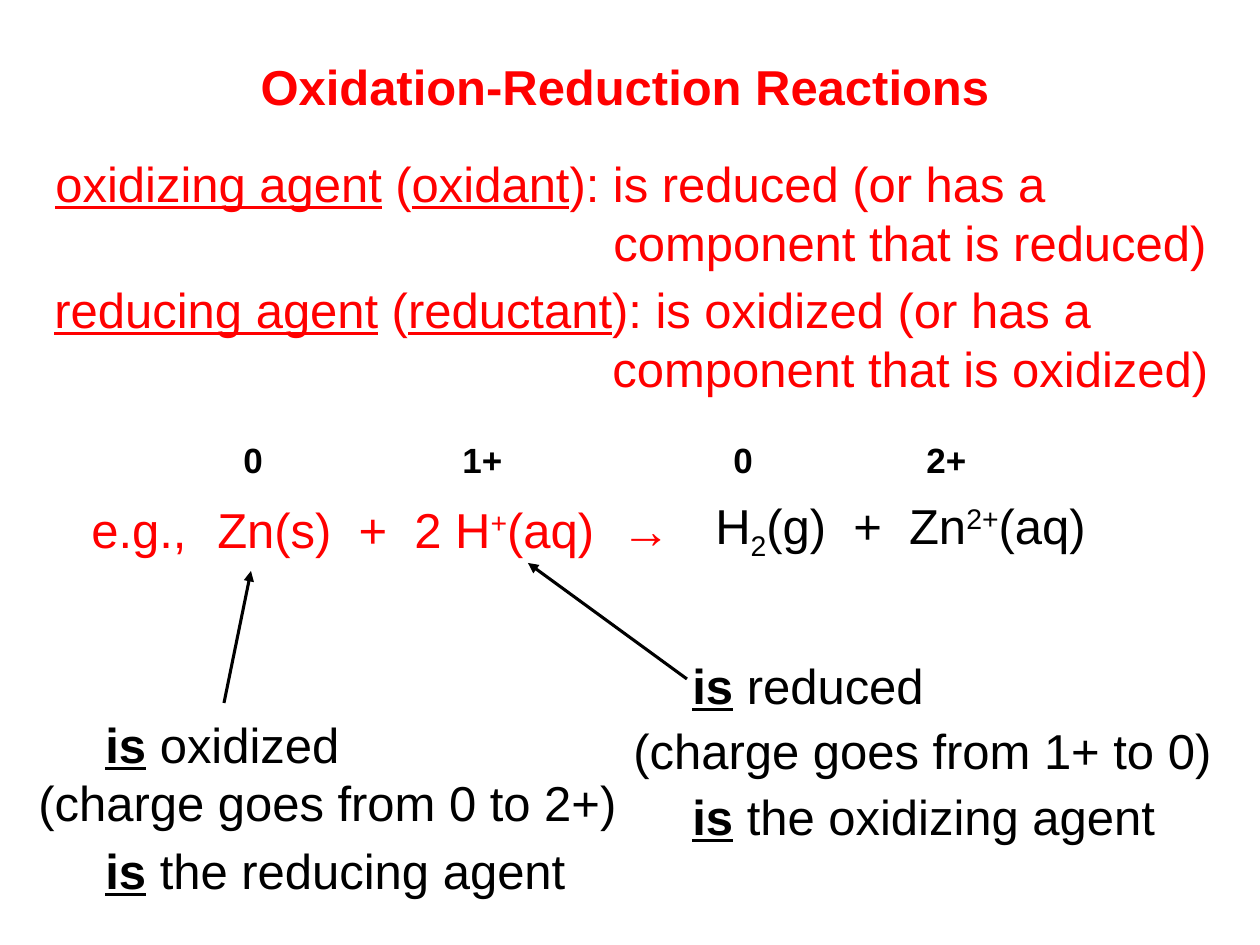
"""Build a slide on oxidizing and reducing agents."""
from pptx import Presentation
from pptx.dml.color import RGBColor
from pptx.enum.shapes import MSO_CONNECTOR
from pptx.enum.text import MSO_ANCHOR, MSO_AUTO_SIZE, PP_ALIGN
from pptx.oxml.ns import qn
from pptx.util import Pt
from lxml import etree

STRAIGHT = MSO_CONNECTOR.STRAIGHT
MIDDLE, TOP = MSO_ANCHOR.MIDDLE, MSO_ANCHOR.TOP
LEFT, NO_FIT = PP_ALIGN.LEFT, MSO_AUTO_SIZE.NONE
PX = 914400 // 126
RED, BLACK = "FF0000", "000000"
LINE_HEIGHT, CHARGE_HEIGHT, DEFINITION_HEIGHT = 72, 54, 130
EQUATION_TOP, CHARGE_TOP = 493, 432
HANGING = 558

PLAIN = {}
BOLD = {"bold": True}
UNDERLINED = {"underline": True}
VERB = {"bold": True, "underline": True}
RAISED, LOWERED = {"baseline": 30000}, {"baseline": -25000}

TITLE = ("Oxidation-Reduction Reactions", (248, 50, 756, LINE_HEIGHT))
DEFINITIONS = [
    ("oxidizing agent", "oxidant", "reduced", 43, 147, 1178),
    ("reducing agent", "reductant", "oxidized", 42, 273, 1182),
]
EQUATION = [
    ([("e.g., \tZn(s)  +  2 H", PLAIN), ("+", RAISED), ("(aq)  →", PLAIN)], 79, 621, RED),
    ([("H", PLAIN), ("2", LOWERED), ("(g)  +  Zn", PLAIN), ("2+", RAISED), ("(aq)", PLAIN)],
     703, 406, BLACK),
]
CHARGES = [("0", 231, 45), ("1+", 450, 66), ("0", 721, 45), ("2+", 914, 66)]
OUTCOMES = [
    ("oxidized", 93, 708, 260),
    ("the reducing agent", 93, 834, 486),
    ("reduced", 680, 649, 257),
    ("the oxidizing agent", 680, 780, 489),
]
CHANGES = [
    ("(charge goes from 0 to 2+)", 26, 766, 605),
    ("(charge goes from 1+ to 0)", 621, 714, 605),
]
ARROWS = [(224, 703, 251, 571), (687, 679, 528, 563)]


def color(value):
    return RGBColor.from_string(value)


def emu(lengths):
    return [length * PX for length in lengths]


def write(box, lines, tint=BLACK, size=28, anchor=TOP, indents=(0,)):
    frame = box.text_frame
    for name, value in {"word_wrap": False, "auto_size": NO_FIT, "vertical_anchor": anchor}.items():
        setattr(frame, name, value)
    for index, (line, indent) in enumerate(zip(lines, indents)):
        para = frame.add_paragraph() if index else frame.paragraphs[0]
        para.alignment = LEFT
        if indent:
            para._p.get_or_add_pPr().set("marL", str(indent * PX))
        for text, style in line:
            span = para.add_run()
            span.text = text
            look = {"name": "Arial", "size": Pt(size), "bold": False, **style}
            baseline = look.pop("baseline", None)
            for name, value in look.items():
                setattr(span.font, name, value)
            span.font.color.rgb = color(tint)
            if baseline:
                span._r.get_or_add_rPr().set("baseline", str(baseline))


def add_text(page, place, lines, **options):
    write(page.shapes.add_textbox(*emu(place)), lines, **options)


def add_arrow(page, ends):
    arrow = page.shapes.add_connector(STRAIGHT, *emu(ends))
    arrow.line.color.rgb = color(BLACK)
    arrow.line.width = Pt(1.75)
    etree.SubElement(arrow.line._get_or_add_ln(), qn("a:tailEnd"), type="triangle")
    etree.SubElement(arrow._element.spPr, qn("a:effectLst"))


def main():
    deck = Presentation()
    deck.slide_width, deck.slide_height = emu((1260, 945))
    page = deck.slides.add_slide(deck.slide_layouts[5])

    heading, place = TITLE
    title = page.shapes.title
    title.left, title.top, title.width, title.height = emu(place)
    write(title, [[(heading, BOLD)]], tint=RED, anchor=MIDDLE)

    for agent, synonym, change, left, top, width in DEFINITIONS:
        lines = [
            [(agent, UNDERLINED), (" (", PLAIN), (synonym, UNDERLINED),
             (f"): is {change} (or has a", PLAIN)],
            [(f"component that is {change})", PLAIN)],
        ]
        add_text(page, (left, top, width, DEFINITION_HEIGHT), lines,
                 tint=RED, anchor=MIDDLE, indents=(0, HANGING))
    for spans, left, width, tint in EQUATION:
        add_text(page, (left, EQUATION_TOP, width, LINE_HEIGHT), [spans], tint=tint, anchor=MIDDLE)
    for ends in ARROWS:
        add_arrow(page, ends)
    for outcome, left, top, width in OUTCOMES:
        add_text(page, (left, top, width, LINE_HEIGHT), [[("is", VERB), (f" {outcome}", PLAIN)]])
    for change, left, top, width in CHANGES:
        add_text(page, (left, top, width, LINE_HEIGHT), [[(change, PLAIN)]])
    for charge, left, width in CHARGES:
        add_text(page, (left, CHARGE_TOP, width, CHARGE_HEIGHT), [[(charge, BOLD)]], size=20)

    deck.save("out.pptx")


if __name__ == "__main__":
    main()
